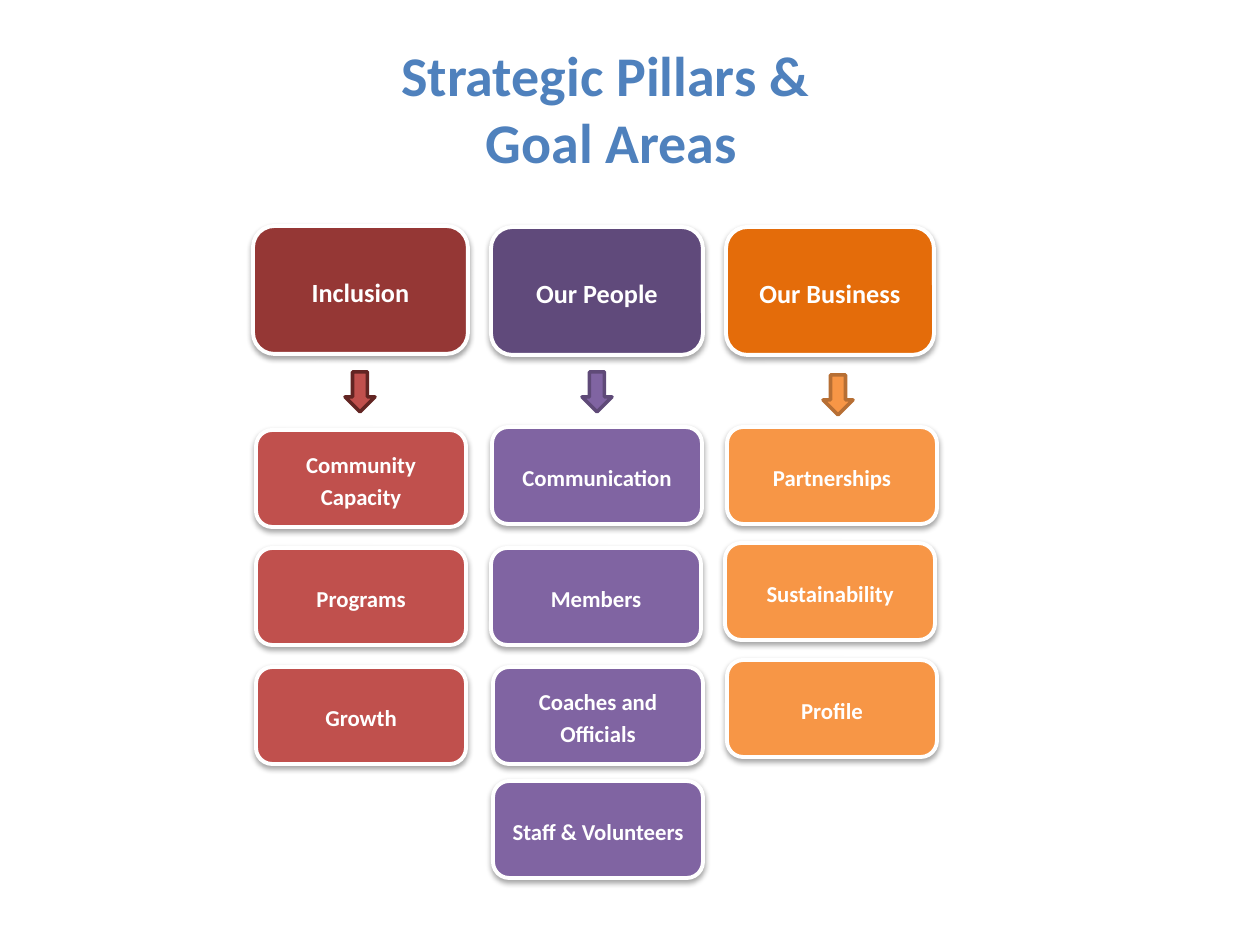
from lxml import etree
from pptx import Presentation
from pptx.dml.color import RGBColor
from pptx.enum.shapes import MSO_SHAPE as Shape
from pptx.enum.text import MSO_ANCHOR as Anchor, PP_ALIGN as Align
from pptx.oxml.ns import qn
from pptx.util import Pt

PX = 914400 / 126  # EMU in one px
GOAL_WIDTH, GOAL_HEIGHT = 210, 97


def write(shape, text, size, color="FFFFFF", spacing=1.0, after=0):
    frame = shape.text_frame
    frame.word_wrap = True
    frame.vertical_anchor = Anchor.MIDDLE
    frame.text = text
    for paragraph in frame.paragraphs:
        paragraph.alignment = Align.CENTER
        paragraph.line_spacing = spacing
        paragraph.space_after = Pt(after)
        font = paragraph.font
        font.name, font.size, font.bold = "Calibri", Pt(size), True
        font.color.rgb = RGBColor.from_string(color)


def add_block(kind, box, fill, line, line_width, text="", size=0):
    shape = slide.shapes.add_shape(kind, *[round(v * PX) for v in box])
    shape.fill.solid()
    shape.fill.fore_color.rgb = RGBColor.from_string(fill)
    shape.line.color.rgb = RGBColor.from_string(line)
    shape.line.width = Pt(line_width)
    shape.shadow.inherit = False
    if text:
        # Soft shadow straight below the card
        effects = shape._element.spPr.find(qn("a:effectLst"))
        shadow = etree.SubElement(
            effects, qn("a:outerShdw"), blurRad=str(Pt(3.1)),
            dist=str(Pt(1.8)), dir="5400000", rotWithShape="0")
        color = etree.SubElement(shadow, qn("a:srgbClr"), val="000000")
        etree.SubElement(color, qn("a:alpha"), val="35000")
        write(shape, text, size, spacing=1.15, after=10)


presentation = Presentation()
presentation.slide_width = round(1260 * PX)
presentation.slide_height = round(945 * PX)
slide = presentation.slides.add_slide(presentation.slide_layouts[6])

# Title
title = slide.shapes.add_textbox(*[round(v * PX) for v in (180, 68, 863, 79)])
write(title, "Strategic Pillars & \nGoal Areas", 32, color="4F81BD")

# Pillars: name, box, dark fill, goal fill, arrow line, arrow corner, goals
pillars = [
    ("Inclusion", (253, 226, 215, 128), "953735", "C0504D", "632523", (345, 372),
     [("Community Capacity", 256, 430), ("Programs", 256, 548),
      ("Growth", 256, 667)]),
    ("Our People", (491, 227, 212, 128), "604A7B", "8064A2", "5F4A78", (582, 372),
     [("Communication", 492, 427), ("Members", 491, 548),
      ("Coaches and Officials", 493, 667), ("Staff & Volunteers", 493, 781)]),
    ("Our Business", (726, 227, 208, 128), "E46C0A", "F79646", "B76F34", (823, 375),
     [("Partnerships", 727, 427), ("Sustainability", 725, 543),
      ("Profile", 727, 660)]),
]

for name, box, dark, light, arrow_line, arrow_corner, goals in pillars:
    # Pillar card and the arrow below it
    add_block(Shape.ROUNDED_RECTANGLE, box, dark, "FFFFFF", 2.25, name, 15)
    add_block(Shape.DOWN_ARROW, (*arrow_corner, 30, 40), light, arrow_line, 2)
    # Goal cards
    for goal, left, top in goals:
        add_block(Shape.ROUNDED_RECTANGLE, (left, top, GOAL_WIDTH, GOAL_HEIGHT),
                  light, "FFFFFF", 2.25, goal, 13)

presentation.save("out.pptx")
